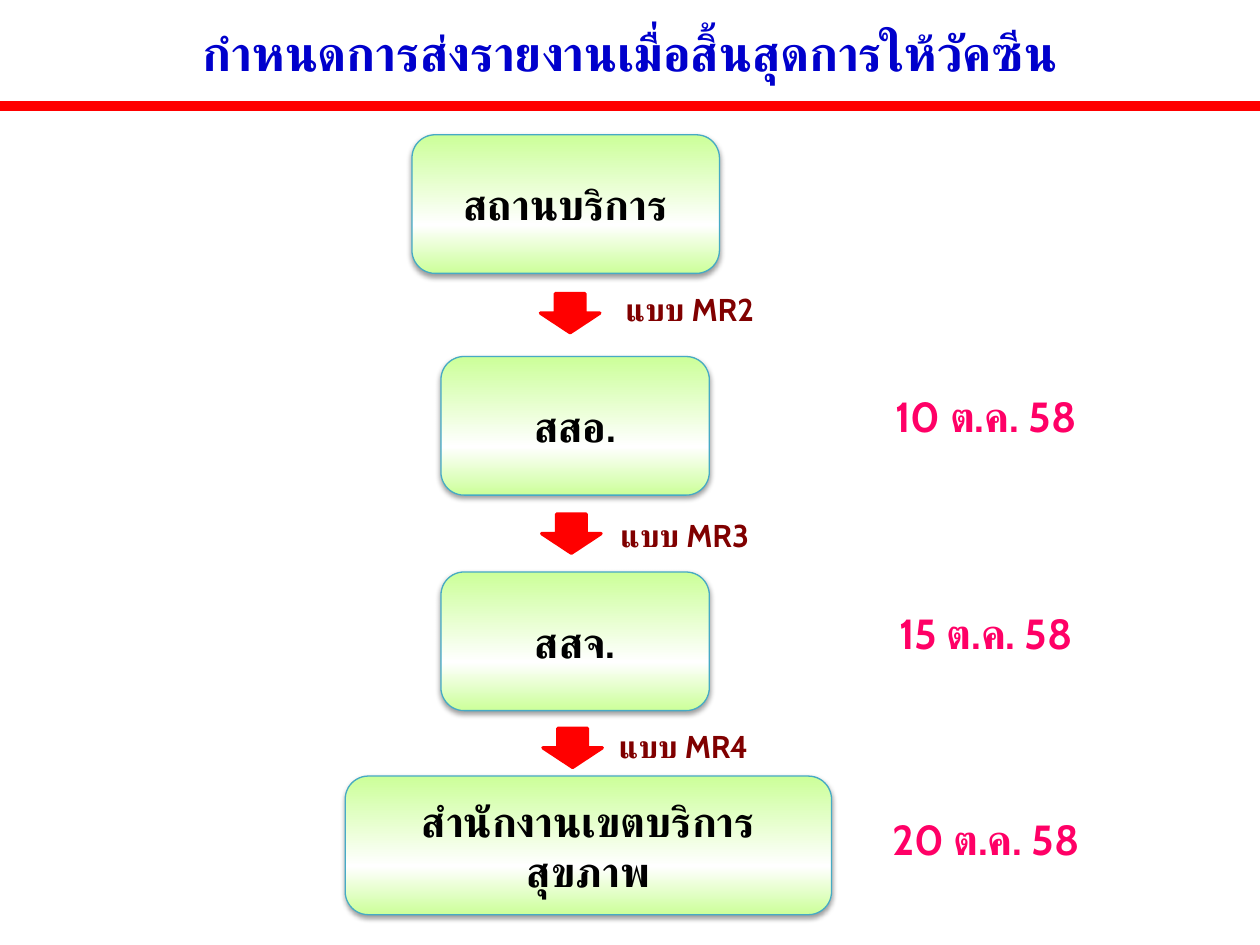
import pptx
import pptx.util
import pptx.dml.color
import pptx.enum.shapes
import pptx.enum.text
import pptx.oxml
import pptx.oxml.ns
from pptx.util import Inches
from lxml import etree

SHAPE = pptx.enum.shapes.MSO_SHAPE
ANCHOR = pptx.enum.text.MSO_ANCHOR
FONT = "Cabin"
NS = pptx.oxml.ns.nsdecls("a")
STOPS = [(0, "CCFF99"), (35, "FFFFFF"), (100, "CCFF99")]
SHADOW = (f'<a:effectLst {NS}><a:outerShdw blurRad="39370" dist="20320" dir="5400000" rotWithShape="0">'
          '<a:srgbClr val="000000"><a:alpha val="38000"/></a:srgbClr></a:outerShdw></a:effectLst>')


def color(value):
    return pptx.dml.color.RGBColor.from_string(value)


def write(s, text, size=24, fill="000000", anchor=ANCHOR.TOP):
    tf = s.text_frame
    tf.word_wrap = True
    tf.vertical_anchor = anchor
    p = tf.paragraphs[0]
    p.alignment = pptx.enum.text.PP_ALIGN.CENTER
    r = p.add_run()
    r.text = text
    r.font.size = pptx.util.Pt(size)
    r.font.bold = True
    r.font.name = FONT
    r.font.color.rgb = color(fill)
    # Thai letters use the complex-script font
    cs = etree.SubElement(r.font._element, pptx.oxml.ns.qn("a:cs"))
    cs.set("typeface", FONT)


def outline(s, fill, width):
    s.line.color.rgb = color(fill)
    s.line.width = pptx.util.Pt(width)


def add_label(slide, box, text, **fmt):
    write(slide.shapes.add_textbox(*map(Inches, box)), text, **fmt)


def add_header(slide, box, rule_y, text):
    left, top, width, height = map(Inches, box)
    title = slide.shapes.title
    title.left, title.top, title.width, title.height = left, top, width, height
    write(title, text, size=28, fill="0000CC")
    # Red rule under the title
    rule = slide.shapes.add_connector(pptx.enum.shapes.MSO_CONNECTOR.STRAIGHT,
                                      left, Inches(rule_y), left + width, Inches(rule_y))
    outline(rule, "FF0000", 6)
    etree.SubElement(rule._element.spPr, pptx.oxml.ns.qn("a:effectLst"))


def add_office(slide, box, text):
    s = slide.shapes.add_shape(SHAPE.ROUNDED_RECTANGLE, *map(Inches, box))
    # Green-white-green gradient running upwards
    s.fill.gradient()
    s.fill.gradient_angle = 90
    stops = s._element.spPr.find(".//" + pptx.oxml.ns.qn("a:gsLst"))
    for old in list(stops):
        stops.remove(old)
    for pos, value in STOPS:
        stops.append(pptx.oxml.parse_xml(
            f'<a:gs {NS} pos="{pos * 1000}"><a:srgbClr val="{value}"/></a:gs>'))
    outline(s, "46AAC5", 0.75)
    s._element.spPr.append(pptx.oxml.parse_xml(SHADOW))
    write(s, text, anchor=ANCHOR.MIDDLE)


def add_step(slide, arrow_box, label_box, form):
    s = slide.shapes.add_shape(SHAPE.DOWN_ARROW, *map(Inches, arrow_box))
    s.shadow.inherit = False
    s.fill.solid()
    s.fill.fore_color.rgb = color("FF0000")
    outline(s, "FF0000", 2)
    add_label(slide, label_box, form, size=18, fill="800000")


def main():
    prs = pptx.Presentation()
    prs.slide_width, prs.slide_height = Inches(10), Inches(7.5)
    slide = prs.slides.add_slide(prs.slide_layouts[5])

    add_header(slide, (0, 0.13, 10, 0.57), 0.84, "กำหนดการส่งรายงานเมื่อสิ้นสุดการให้วัคซีน")

    # Offices, from the service unit up to the region
    for left, top, width, name in [(3.27, 1.07, 2.44, "สถานบริการ"),
                                   (3.5, 2.83, 2.13, "สสอ."),
                                   (3.5, 4.54, 2.13, "สสจ."),
                                   (2.74, 6.16, 3.86, "สำนักงานเขตบริการสุขภาพ")]:
        add_office(slide, (left, top, width, 1.1), name)

    # Arrows with the form sent at each step
    for x, y, label_x, label_y, form in [(4.29, 2.33, 4.69, 2.25, "แบบ MR2"),
                                         (4.3, 4.08, 4.65, 4.05, "แบบ MR3"),
                                         (4.31, 5.78, 4.64, 5.72, "แบบ MR4")]:
        add_step(slide, (x, y, 0.47, 0.31), (label_x, label_y, 1.57, 0.4), form)

    # Due dates
    for top, day in [(3.05, 10), (4.77, 15), (6.41, 20)]:
        add_label(slide, (6.8, top, 2.05, 0.5), f"{day} ต.ค. 58", fill="FF0066")

    prs.save("out.pptx")


if __name__ == "__main__":
    main()
